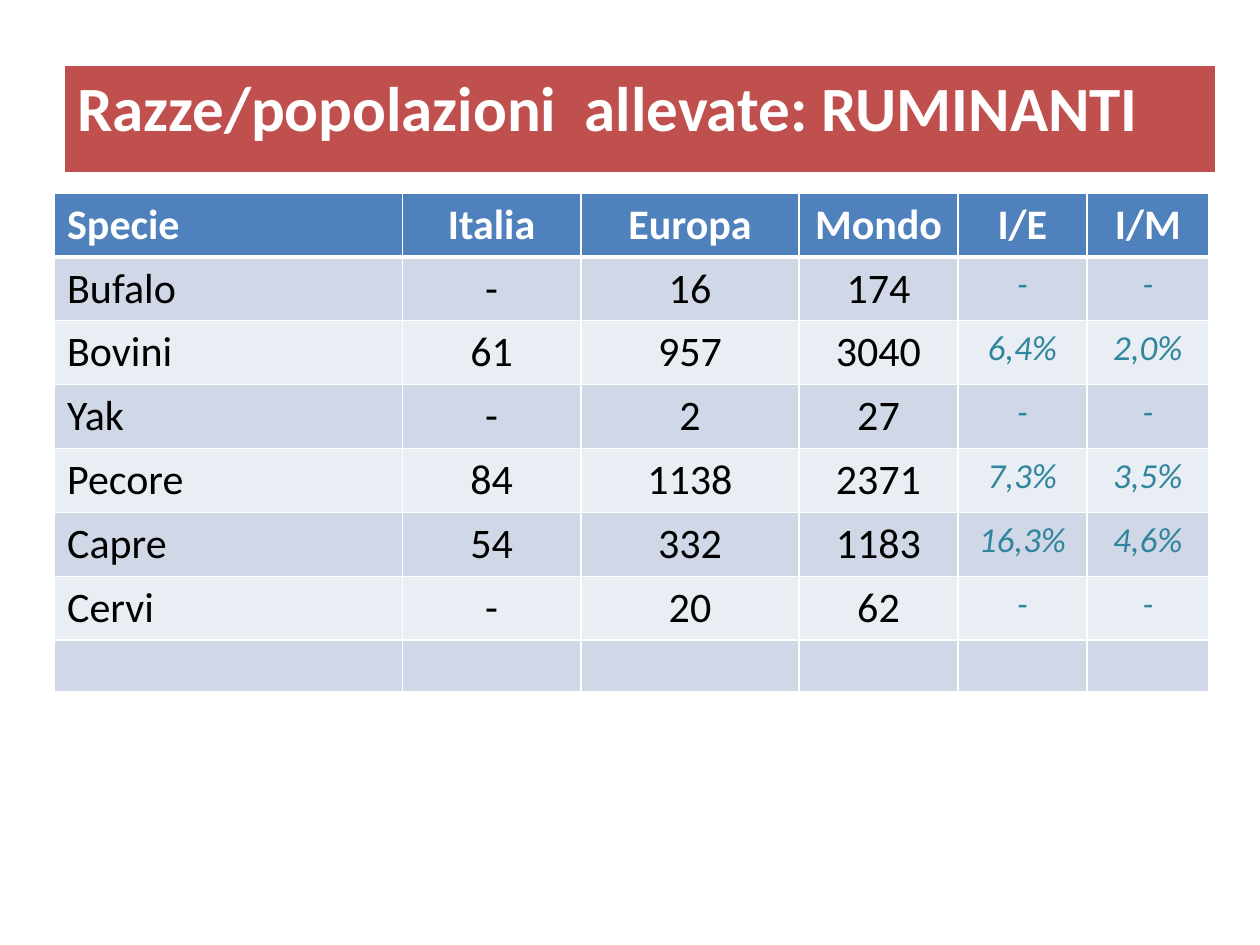
from lxml import etree
from pptx import Presentation
from pptx.dml.color import RGBColor
from pptx.enum.text import PP_ALIGN
from pptx.oxml.ns import qn
from pptx.util import Cm, Pt

LEFT, CENTER = PP_ALIGN.LEFT, PP_ALIGN.CENTER
WHITE, BLACK, TEAL = "FFFFFF", "000000", "31859C"
RED, BLUE = "C0504D", "4F81BD"
BANDS = ["D0D8E8", "E9EDF4"]


def rgb(value):
    return RGBColor.from_string(value)


def format_cell(cell, text, fill, size, color, align=LEFT, bold=False,
                italic=False, top=1, bottom=1):
    # White borders on the four sides, then the fill
    tcPr = cell._tc.get_or_add_tcPr()
    for side, width in zip("LRTB", (1, 1, top, bottom)):
        ln = etree.SubElement(tcPr, qn(f"a:ln{side}"), w=str(Pt(width)))
        solid = etree.SubElement(ln, qn("a:solidFill"))
        etree.SubElement(solid, qn("a:srgbClr"), val=WHITE)
    cell.fill.solid()
    cell.fill.fore_color.rgb = rgb(fill)
    if not text:
        return
    p = cell.text_frame.paragraphs[0]
    p.alignment = align
    r = p.add_run()
    r.text = text
    r.font.name = "Calibri"
    r.font.size = Pt(size)
    r.font.bold = bold
    r.font.italic = italic
    r.font.color.rgb = rgb(color)


prs = Presentation()
prs.slide_width, prs.slide_height = Cm(25.4), Cm(19.05)
s = prs.slides.add_slide(prs.slide_layouts[6])

# Breed counts by species
rows = [
    ["Specie", "Italia", "Europa", "Mondo", "I/E", "I/M"],
    ["Bufalo", "-", "16", "174", "-", "-"],
    ["Bovini", "61", "957", "3040", "6,4%", "2,0%"],
    ["Yak", "-", "2", "27", "-", "-"],
    ["Pecore", "84", "1138", "2371", "7,3%", "3,5%"],
    ["Capre", "54", "332", "1183", "16,3%", "4,6%"],
    ["Cervi", "-", "20", "62", "-", "-"],
    [""] * 6,
]
widths = [7.01, 3.6, 4.4, 3.2, 2.6, 2.46]
frame = s.shapes.add_table(len(rows), len(widths), Cm(1.1), Cm(3.89),
                           Cm(sum(widths)), Cm(9.93))
table = frame.table
for column, width in zip(table.columns, widths):
    column.width = Cm(width)
for i, values in enumerate(rows):
    table.rows[i].height = Cm(1.03)  # rows grow to fit their text
    for j, text in enumerate(values):
        cell = table.cell(i, j)
        align = CENTER if j else LEFT
        if i == 0:
            format_cell(cell, text, BLUE, 24, WHITE, align, bold=True, bottom=3)
            continue
        ratio = j >= 4
        format_cell(cell, text, BANDS[(i - 1) % 2], 20 if ratio else 24,
                    TEAL if ratio else BLACK, align, italic=ratio,
                    top=3 if i == 1 else 1)
frame.height = Cm(9.93)

# Title banner, a table of one cell
banner = s.shapes.add_table(1, 1, Cm(1.3), Cm(1.32), Cm(23.2), Cm(2.2)).table
format_cell(banner.cell(0, 0), "Razze/popolazioni  allevate: RUMINANTI",
            RED, 36, WHITE, bold=True, bottom=3)

prs.save("out.pptx")
